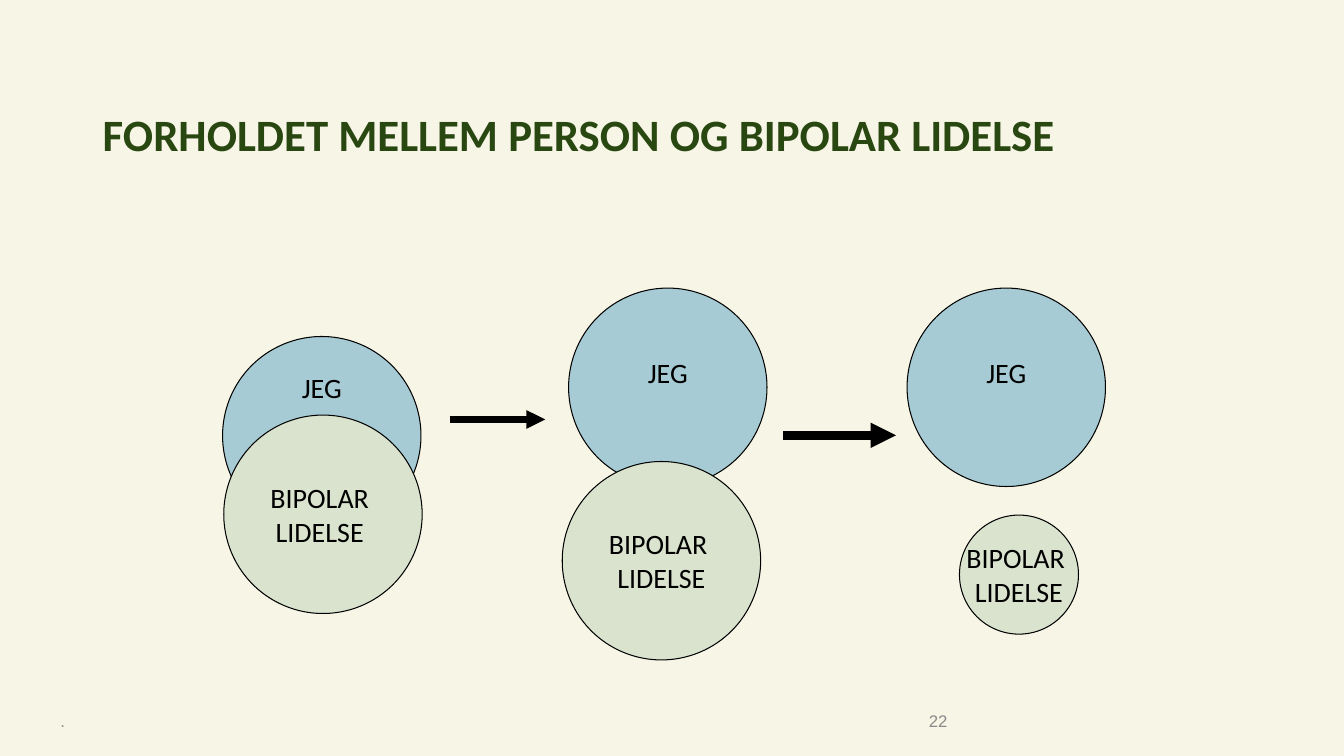
import pptx
import pptx.dml.color
import pptx.enum.shapes
import pptx.enum.text
import pptx.oxml.ns
import lxml.etree

Cm = pptx.util.Cm
Pt = pptx.util.Pt
qn = pptx.oxml.ns.qn
ALIGN = pptx.enum.text.PP_ALIGN
SHAPES = pptx.enum.shapes


def color(value):
    return pptx.dml.color.RGBColor.from_string(value)


def write(box, lines, size, font, ink, align, wrap=True, bold=False):
    frame = box.text_frame
    frame.text = "\n".join(lines)
    frame.word_wrap = wrap
    frame.vertical_anchor = pptx.enum.text.MSO_ANCHOR.MIDDLE
    for para in frame.paragraphs:
        para.alignment = align
        for span in para.runs:
            span.font.size = Pt(size)
            span.font.name = font
            span.font.bold = bold
            span.font.color.rgb = color(ink)


deck = pptx.Presentation()
deck.slide_width = Cm(33.87)
deck.slide_height = Cm(19.05)
page = deck.slides.add_slide(deck.slide_layouts[6])
page.background.fill.solid()
page.background.fill.fore_color.rgb = color("F7F6E6")

title = page.shapes.add_textbox(Cm(2.34), Cm(2.39), Cm(29.21), Cm(2.13))
write(title, ["FORHOLDET MELLEM PERSON OG BIPOLAR LIDELSE"], 32, "Calibri", "294711", ALIGN.LEFT, bold=True)
title.text_frame.paragraphs[0].line_spacing = 0.9

self_lines = ["JEG"]
illness_lines = ["BIPOLAR ", "LIDELSE"]
circles = [
    (5.61, 8.48, 5, self_lines, 2.58),
    (5.64, 10.46, 5, ["BIPOLAR ", "LIDELSE "], 0.13),
    (14.33, 7.26, 5, self_lines, 0.87),
    (14.17, 11.63, 5, illness_lines, 0.13),
    (22.86, 7.26, 5, self_lines, 0.87),
    (24.18, 12.98, 3, illness_lines, 0.13),
]
for left, top, diameter, lines, bottom_margin in circles:
    circle = page.shapes.add_shape(SHAPES.MSO_SHAPE.OVAL, Cm(left), Cm(top), Cm(diameter), Cm(diameter))
    circle.shadow.inherit = False
    circle.line.color.rgb = color("000000")
    circle.line.width = Pt(0.75)
    circle.fill.solid()
    circle.fill.fore_color.rgb = color("2889BA" if lines is self_lines else "D9E3CE")
    if lines is self_lines:
        tint = circle.fill._xPr.find(".//" + qn("a:srgbClr"))
        lxml.etree.SubElement(tint, qn("a:alpha"), val="39000")
    write(circle, lines, 20, "Calibri", "000000", ALIGN.CENTER, wrap=False)
    circle.text_frame.margin_bottom = Cm(bottom_margin)

for start, end, height, weight in [(11.33, 13.74, 10.57, 4.5), (19.74, 22.58, 10.97, 6)]:
    arrow = page.shapes.add_connector(SHAPES.MSO_CONNECTOR.STRAIGHT, Cm(start), Cm(height), Cm(end), Cm(height))
    arrow.line.color.rgb = color("000000")
    arrow.line.width = Pt(weight)
    lxml.etree.SubElement(arrow.line._get_or_add_ln(), qn("a:tailEnd"), type="triangle")
    lxml.etree.SubElement(arrow._element.spPr, qn("a:effectLst"))

for left, text, ink, align in [(1.27, ".", "8C8C8C", ALIGN.LEFT), (18.21, "22", "898989", ALIGN.RIGHT)]:
    footer = page.shapes.add_textbox(Cm(left), Cm(17.65), Cm(5.92), Cm(1.02))
    write(footer, [text], 12, "Arial", ink, align)

deck.save("out.pptx")
